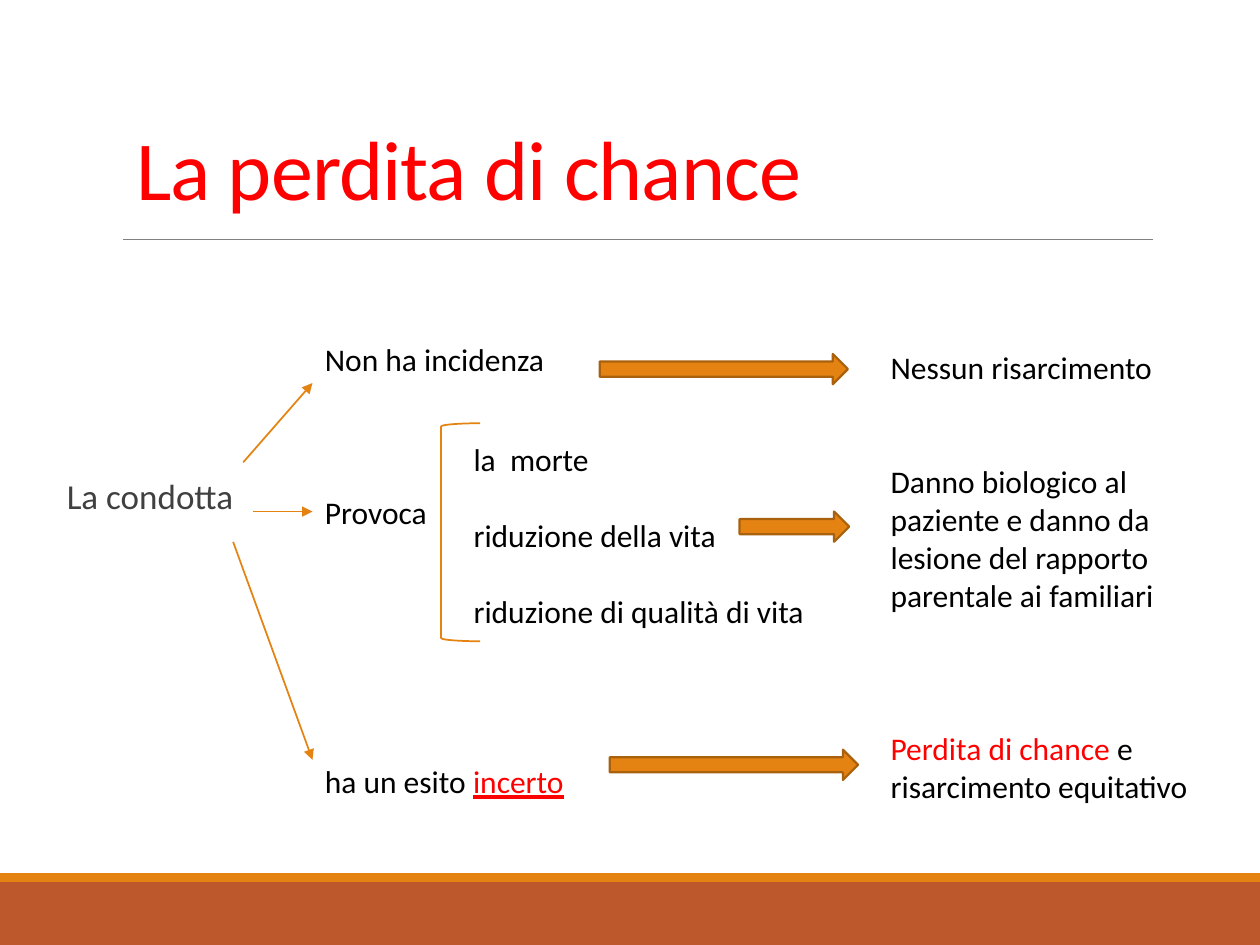
from dataclasses import dataclass
from typing import NamedTuple

from lxml import etree
from pptx import Presentation
from pptx.dml.color import RGBColor
from pptx.enum.shapes import MSO_CONNECTOR, MSO_SHAPE
from pptx.enum.text import MSO_ANCHOR, MSO_AUTO_SIZE, PP_ALIGN
from pptx.oxml.ns import qn
from pptx.util import Inches, Pt

STRAIGHT = MSO_CONNECTOR.STRAIGHT
RECTANGLE = MSO_SHAPE.RECTANGLE
RIGHT_ARROW = MSO_SHAPE.RIGHT_ARROW
LEFT_BRACKET = MSO_SHAPE.LEFT_BRACKET
TOP, BOTTOM = MSO_ANCHOR.TOP, MSO_ANCHOR.BOTTOM
NO_AUTOFIT = MSO_AUTO_SIZE.NONE
LEFT, JUSTIFY = PP_ALIGN.LEFT, PP_ALIGN.JUSTIFY

WIDTH, HEIGHT = Inches(10), Inches(7.5)
COLUMN, ROW = WIDTH / 100, HEIGHT / 75


@dataclass(frozen=True)
class Theme:
    font: str = "Calibri"
    title_size: int = 48
    subject_size: int = 20
    label_size: int = 18
    label_line: int = 22
    black: str = "000000"
    grey: str = "404040"
    rule: str = "808080"
    red: str = "FF0000"
    orange: str = "E48312"
    orange_edge: str = "A9610D"
    rust: str = "BD582C"


THEME = Theme()


class Area(NamedTuple):
    col: float
    row: float
    cols: float
    rows: float


class Link(NamedTuple):
    col: float
    row: float
    end_col: float
    end_row: float


class Piece(NamedTuple):
    words: str
    color: str = THEME.black
    underline: bool = False


class Label(NamedTuple):
    pieces: tuple[Piece, ...]
    lines_before: int = 0


class Column(NamedTuple):
    area: Area
    labels: tuple[Label, ...]


FOOTER = ((Area(0, 70, 100, 5), THEME.rust), (Area(0, 69.3, 100, 0.7), THEME.orange))
TITLE_RULE = Link(9.8, 19, 91.5, 19)
BRANCHES = (
    Link(19.3, 36.7, 24.8, 30.4),
    Link(20.1, 40.6, 24.8, 40.6),
    Link(18.5, 43, 24.8, 60.3),
)
OUTCOME_ARROWS = (
    Area(47.6, 28.1, 19.7, 2.4),
    Area(58.7, 40.6, 8.7, 2.4),
    Area(48.4, 59.5, 19.7, 2.4),
)
HARM_BRACKET = Area(35, 33.6, 3.1, 17.3)

HARMS = Column(Area(36.6, 34.4, 29.1, 16.2), (
    Label((Piece("la  morte"),)),
    Label((Piece("riduzione della vita"),), 1),
    Label((Piece("riduzione di qualità di vita"),), 1),
))
EFFECTS = Column(Area(24.8, 26.5, 25.2, 37.4), (
    Label((Piece("Non ha incidenza"),)),
    Label((Piece("Provoca"),), 3),
    Label((Piece("ha un esito "), Piece("incerto", THEME.red, True)), 6),
))
OUTCOMES = Column(Area(69.7, 27.1, 28.3, 49.4 - 3), (
    Label((Piece("Nessun risarcimento"),)),
    Label((Piece("Danno biologico al paziente e danno da lesione "
                 "del rapporto parentale ai familiari"),), 2),
    Label((Piece("Perdita di chance ", THEME.red),
           Piece("e risarcimento equitativo")), 3),
))


def box(area: Area) -> tuple[int, int, int, int]:
    return (round(area.col * COLUMN), round(area.row * ROW),
            round(area.cols * COLUMN), round(area.rows * ROW))


def rgb(color: str) -> RGBColor:
    return RGBColor.from_string(color)


def set_font(font, size: int, color: str) -> None:
    font.name = THEME.font
    font.size = Pt(size)
    font.color.rgb = rgb(color)


def add_figure(slide, kind, area: Area, fill: str = "", edge: str = "",
               weight: float = 1) -> None:
    figure = slide.shapes.add_shape(kind, *box(area))
    figure.shadow.inherit = False
    if fill:
        figure.fill.solid()
        figure.fill.fore_color.rgb = rgb(fill)
    else:
        figure.fill.background()
    if edge:
        figure.line.color.rgb = rgb(edge)
        figure.line.width = Pt(weight)
    else:
        figure.line.fill.background()


def add_link(slide, link: Link, color: str, weight: float, arrow: bool) -> None:
    line = slide.shapes.add_connector(
        STRAIGHT, round(link.col * COLUMN), round(link.row * ROW),
        round(link.end_col * COLUMN), round(link.end_row * ROW))
    line.line.color.rgb = rgb(color)
    line.line.width = Pt(weight)
    if arrow:
        etree.SubElement(line.line._get_or_add_ln(), qn("a:tailEnd"), type="triangle")
    etree.SubElement(line._element.spPr, qn("a:effectLst"))


def add_column(slide, column: Column) -> None:
    frame = slide.shapes.add_textbox(*box(column.area)).text_frame
    frame.word_wrap = True
    for index, label in enumerate(column.labels):
        paragraph = frame.add_paragraph() if index else frame.paragraphs[0]
        paragraph.space_before = Pt(label.lines_before * THEME.label_line)
        set_font(paragraph.font, THEME.label_size, THEME.black)
        for piece in label.pieces:
            run = paragraph.add_run()
            run.text = piece.words
            set_font(run.font, THEME.label_size, piece.color)
            if piece.underline:
                run.font.underline = True


def fill_placeholder(holder, area: Area, words: str, size: int, color: str,
                     anchor, align, spacing: float):
    holder.left, holder.top, holder.width, holder.height = box(area)
    frame = holder.text_frame
    frame.text = words
    frame.auto_size = NO_AUTOFIT
    frame.vertical_anchor = anchor
    paragraph = frame.paragraphs[0]
    paragraph.alignment = align
    paragraph.line_spacing = spacing
    set_font(paragraph.font, size, color)
    return frame


def add_title(slide) -> None:
    frame = fill_placeholder(slide.shapes.title, Area(9.8, 8.4, 82.5, 9.4),
                             "La perdita di chance", THEME.title_size, THEME.red,
                             BOTTOM, LEFT, 0.85)
    frame.paragraphs[0].runs[0]._r.get_or_add_rPr().set("spc", "-50")


def add_subject(slide) -> None:
    frame = fill_placeholder(slide.placeholders[1], Area(4.3, 37.5, 17.3, 5.5),
                             "La condotta", THEME.subject_size, THEME.grey,
                             TOP, JUSTIFY, 0.9)
    frame.margin_left = frame.margin_right = 0
    paragraph = frame.paragraphs[0]
    paragraph.space_before, paragraph.space_after = Pt(12), Pt(2)
    properties = paragraph._p.get_or_add_pPr()
    properties.set("marL", str(Inches(0.1)))
    properties.set("indent", "0")
    properties.insert_element_before(
        properties.makeelement(qn("a:buNone")), "a:tabLst", "a:defRPr", "a:extLst")


def main() -> None:
    deck = Presentation()
    deck.slide_width, deck.slide_height = WIDTH, HEIGHT
    slide = deck.slides.add_slide(deck.slide_layouts[1])
    for band, color in FOOTER:
        add_figure(slide, RECTANGLE, band, color)
    add_link(slide, TITLE_RULE, THEME.rule, 0.5, False)
    add_title(slide)
    add_subject(slide)
    for column in (HARMS, EFFECTS, OUTCOMES):
        add_column(slide, column)
    for branch in BRANCHES:
        add_link(slide, branch, THEME.orange, 1, True)
    for arrow in OUTCOME_ARROWS:
        add_figure(slide, RIGHT_ARROW, arrow, THEME.orange, THEME.orange_edge, 1.25)
    add_figure(slide, LEFT_BRACKET, HARM_BRACKET, edge=THEME.orange)
    deck.save("out.pptx")


if __name__ == "__main__":
    main()
